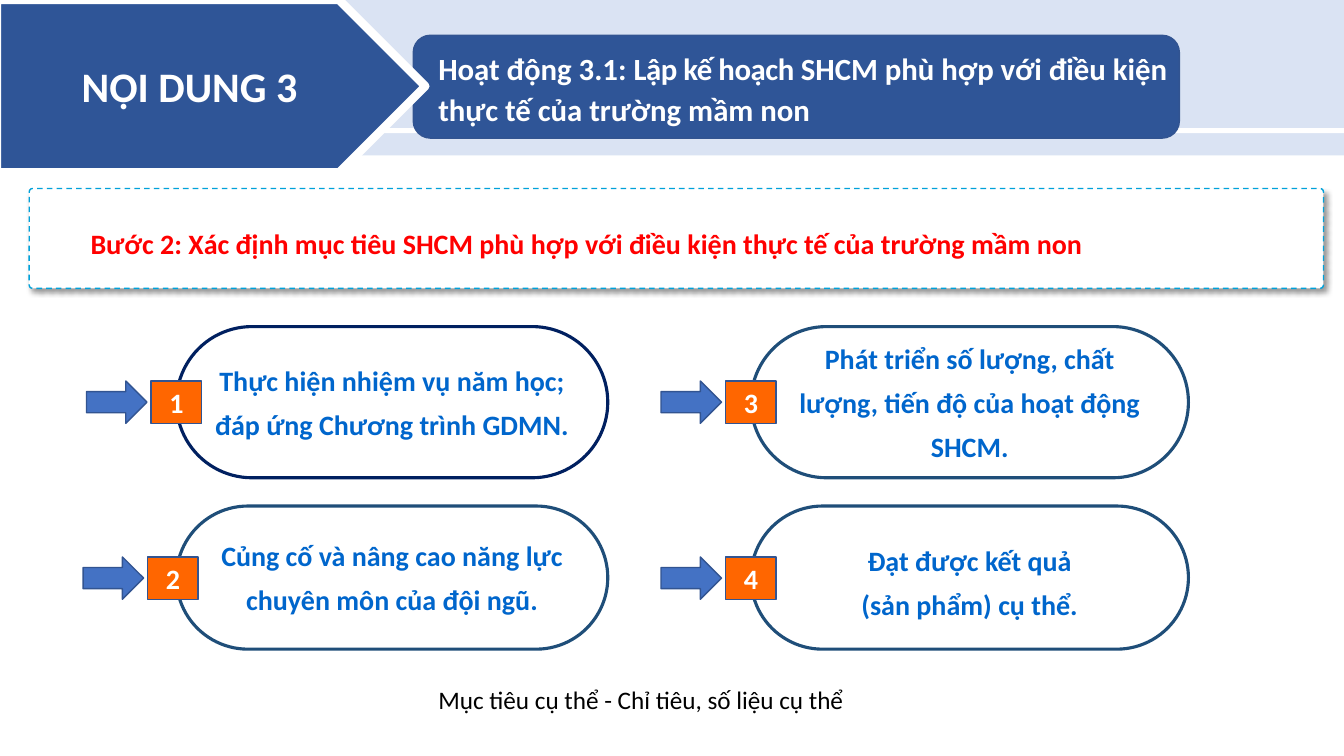
from lxml.etree import SubElement
from pptx import Presentation
from pptx.dml.color import RGBColor
from pptx.enum.dml import MSO_LINE
from pptx.enum.shapes import MSO_SHAPE
from pptx.enum.text import MSO_ANCHOR, PP_ALIGN
from pptx.oxml import parse_xml
from pptx.oxml.ns import nsdecls, qn
from pptx.util import Inches, Pt

W, H = Inches(13.33), Inches(7.5)
COL, ROW = W / 160, H / 90  # slide grid: 160 columns by 90 rows

COLORS = {
    "white": "FFFFFF", "black": "000000", "band": "DAE3F3", "navy": "2F5597",
    "edge": "325491", "dash": "00A1DA", "red": "FF0000", "text": "0066CC",
    "badge": "FF6600", "arrow": "4472C4", "pill": "1F4E79", "pill_first": "002060",
}

# Left column, width of the pills; top row, height of the pills, row of the badges
PILL_COLS = [(21, 51.36), (89.4, 52.08)]
PILL_ROWS = [(38.88, 18, 45.36), (60.24, 17.04, 66.3)]

# Column, row, badge column, outline, bottom inset in rows, paragraphs
GOALS = [
    (0, 0, 18, "pill_first", 1.8,
     ["Thực hiện nhiệm vụ năm học; đáp ứng Chương trình GDMN."]),
    (0, 1, 17.6, "pill", 1.8,
     ["Củng cố và nâng cao năng lực chuyên môn của đội ngũ."]),
    (1, 0, 86.4, "pill", 1.8,
     ["Phát triển số lượng, chất lượng, tiến độ của hoạt động SHCM."]),
    (1, 1, 86.4, "pill", 0.6,
     ["Đạt được kết quả", "(sản phẩm) cụ thể."]),
]


def rgb(name):
    return RGBColor.from_string(COLORS[name])


def place(x, y, w, h):
    return round(x * COL), round(y * ROW), round(w * COL), round(h * ROW)


def add_box(s, kind, box, fill, line=None, width=1, adj=None):
    sp = s.shapes.add_shape(kind, *place(*box))
    sp.shadow.inherit = False
    sp.fill.solid()
    sp.fill.fore_color.rgb = rgb(fill)
    if line:
        sp.line.color.rgb = rgb(line)
        sp.line.width = Pt(width)
    else:
        sp.line.fill.background()
    if adj is not None:
        sp.adjustments[0] = adj
    return sp


def write(sp, paragraphs, size, color, bold=True, align=PP_ALIGN.CENTER,
          spacing=1.0, anchor=MSO_ANCHOR.MIDDLE):
    """Each paragraph is a list of run texts."""
    tf = sp.text_frame
    tf.word_wrap = True
    tf.vertical_anchor = anchor
    for i, runs in enumerate(paragraphs):
        p = tf.add_paragraph() if i else tf.paragraphs[0]
        p.alignment = align
        p.line_spacing = spacing
        for text in runs:
            r = p.add_run()
            r.text = text
            r.font.name = "Calibri"
            r.font.size = Pt(size)
            r.font.bold = bold
            r.font.color.rgb = rgb(color)
    return tf


def add_text(s, box, runs, size, color, **style):
    sp = s.shapes.add_textbox(*place(*box))
    return write(sp, [runs], size, color, align=PP_ALIGN.LEFT,
                 anchor=MSO_ANCHOR.TOP, **style)


def add_header(s):
    # Pale band with a white stripe
    add_box(s, MSO_SHAPE.RECTANGLE, (0, 0, 160, 18.5), "band")
    add_box(s, MSO_SHAPE.RECTANGLE, (26.7, 15.24, 133.3, 0.6), "white")
    # Activity title and section tag
    add_box(s, MSO_SHAPE.ROUNDED_RECTANGLE, (49.2, 4.2, 91.2, 12.24), "navy", "edge")
    tag = add_box(s, MSO_SHAPE.PENTAGON, (-0.36, 0, 51, 20.52), "navy", "white", 6)
    write(tag, [["NỘI DUNG 3"]], 30, "white")
    tf = add_text(s, (51, 4.92, 89.4, 10.8),
                  ["Hoạt động 3.1: ", "Lập kế hoạch ",
                   "SHCM phù hợp với điều kiện thực tế của trường mầm non"],
                  22, "white", spacing=1.1)
    tf.paragraphs[0].runs[1].font._element.set("spc", "-30")


def add_step(s):
    sp = add_box(s, MSO_SHAPE.ROUNDED_RECTANGLE, (3.48, 22.44, 154.08, 11.88),
                 "white", "dash", adj=0.033)
    sp.line.dash_style = MSO_LINE.DASH
    # Soft shadow to the lower right
    effects = sp._element.spPr.find(qn("a:effectLst"))
    effects.append(parse_xml(
        f'<a:outerShdw {nsdecls("a")} blurRad="50800" dist="38100" dir="2700000" '
        f'algn="tl" rotWithShape="0"><a:srgbClr val="{COLORS["black"]}">'
        '<a:alpha val="40000"/></a:srgbClr></a:outerShdw>'))
    tf = write(sp, [["Bước 2: Xác định mục tiêu SHCM phù hợp với điều kiện "
                     "thực tế của trường mầm non"]],
               20, "red", align=PP_ALIGN.LEFT, spacing=1.3)
    pPr = tf.paragraphs[0]._p.get_or_add_pPr()
    pPr.set("marL", "0")
    pPr.set("indent", str(Inches(0.5)))


def add_pill(s, col, row, line, inset, paragraphs):
    (x, w), (y, h, _) = PILL_COLS[col], PILL_ROWS[row]
    sp = add_box(s, MSO_SHAPE.ROUNDED_RECTANGLE, (x, y, w, h), "white", line, 2.25, 0.5)
    color = sp._element.spPr.find(qn("a:solidFill"))[0]
    SubElement(color, qn("a:alpha")).set("val", "95000")
    tf = write(sp, [[text] for text in paragraphs], 20, "text", spacing=1.3)
    tf.margin_bottom = round(inset * ROW)


def add_marker(s, number, x, row):
    y = PILL_ROWS[row][2]
    badge = add_box(s, MSO_SHAPE.RECTANGLE, (x, y, 6, 5.04), "badge", "edge")
    write(badge, [[str(number)]], 20, "white")
    add_box(s, MSO_SHAPE.RIGHT_ARROW, (x - 7.7, y, 7.2, 5.04), "arrow", "edge")


def main():
    prs = Presentation()
    prs.slide_width, prs.slide_height = W, H
    s = prs.slides.add_slide(prs.slide_layouts[6])
    add_header(s)
    add_step(s)
    # Four numbered goals
    for number, (col, row, x, line, inset, paragraphs) in enumerate(GOALS, 1):
        add_pill(s, col, row, line, inset, paragraphs)
        add_marker(s, number, x, row)
    # Closing note
    add_text(s, (51, 80.88, 60.24, 4.8),
             ["Mục tiêu cụ thể - Chỉ tiêu, số liệu cụ thể"], 18, "black", bold=False)
    prs.save("out.pptx")


if __name__ == "__main__":
    main()
